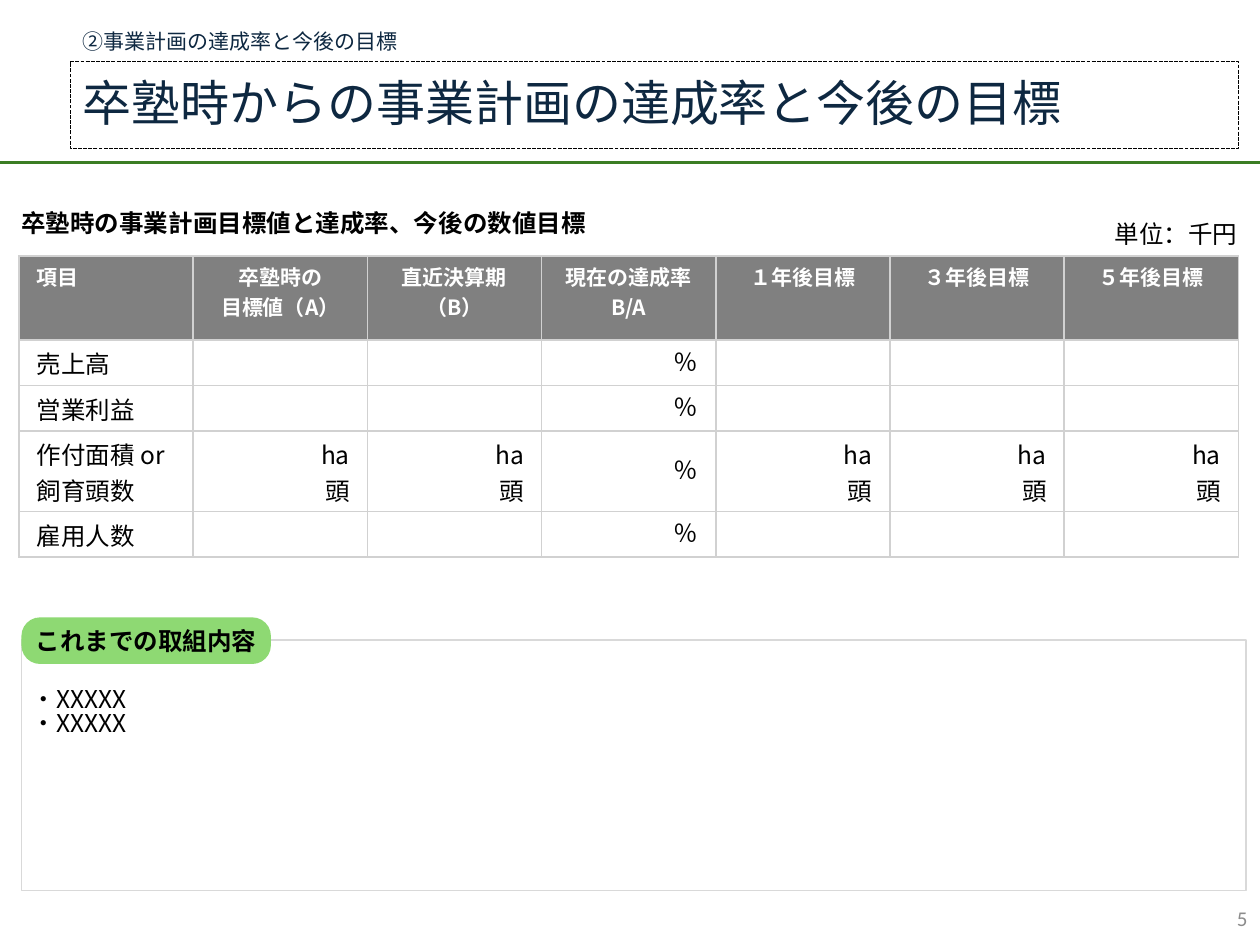
from lxml import etree
from pptx import Presentation
from pptx.dml.color import RGBColor
from pptx.enum.dml import MSO_LINE
from pptx.enum.shapes import MSO_CONNECTOR, MSO_SHAPE
from pptx.enum.text import MSO_ANCHOR, PP_ALIGN
from pptx.oxml.ns import qn
from pptx.util import Inches, Pt

LEFT, CENTER, RIGHT = PP_ALIGN.LEFT, PP_ALIGN.CENTER, PP_ALIGN.RIGHT
TOP, MIDDLE = MSO_ANCHOR.TOP, MSO_ANCHOR.MIDDLE
RECT, ROUNDED = MSO_SHAPE.RECTANGLE, MSO_SHAPE.ROUNDED_RECTANGLE
STRAIGHT, DASH = MSO_CONNECTOR.STRAIGHT, MSO_LINE.SQUARE_DOT

COLORS = {
    "navy": "0E2841", "black": "000000", "white": "FFFFFF", "header": "808080",
    "grid": "D1D1D1", "frame": "D9D9D9", "rule": "3B7D23", "label": "8ED973",
    "number": "8C8C8C",
}
JP, LATIN = "Noto Sans CJK JP", "Calibri"
BOX_INSETS = (0.1, 0.05, 0.1, 0.05)
CELL_INSETS = (0.14, 0.04, 0.14, 0.04)


def rgb(name):
    return RGBColor.from_string(COLORS[name])


class SlideBuilder:
    """Holds the text style and the current slide."""

    def __init__(self, prs):
        self.shapes = prs.slides.add_slide(prs.slide_layouts[6]).shapes
        self.style = {"size": 14, "bold": False, "color": "black", "font": JP,
                      "align": LEFT, "spacing": 1.0}

    def put_text(self, tf, text, **changes):
        """Fill a text frame, one paragraph for each line."""
        style = {**self.style, **changes}
        for i, line in enumerate(text.split("\n")):
            p = tf.paragraphs[0] if i == 0 else tf.add_paragraph()
            formats = {"alignment": style["align"], "line_spacing": style["spacing"]}
            for name, value in formats.items():
                setattr(p, name, value)
            if not line:  # an empty cell keeps the body text height
                end = etree.SubElement(p._p, qn("a:endParaRPr"))
                end.set("sz", str(style["size"] * 100))
                continue
            r = p.add_run()
            r.text = line
            fonts = {"size": Pt(style["size"]), "bold": style["bold"], "name": style["font"]}
            for name, value in fonts.items():
                setattr(r.font, name, value)
            r.font.color.rgb = rgb(style["color"])
            # East Asian glyphs take the same typeface
            ea = etree.SubElement(r.font._element, qn("a:ea"))
            ea.set("typeface", style["font"])

    def frame(self, holder, insets, anchor):
        """Set insets and anchor of a text frame or a table cell."""
        sides = ("margin_left", "margin_top", "margin_right", "margin_bottom")
        formats = dict(zip(sides, map(Inches, insets)), vertical_anchor=anchor)
        for name, value in formats.items():
            setattr(holder, name, value)

    def text(self, box, text, anchor=TOP, **style):
        s = self.shapes.add_textbox(*map(Inches, box))
        s.text_frame.word_wrap = True
        self.frame(s.text_frame, BOX_INSETS, anchor)
        self.put_text(s.text_frame, text, **style)

    def shape(self, kind, box, text, fill=None, line=None, dash=None, radius=None,
              insets=BOX_INSETS, anchor=MIDDLE, **style):
        s = self.shapes.add_shape(kind, *map(Inches, box))
        s.shadow.inherit = False
        if radius is not None:
            s.adjustments[0] = radius
        if fill:
            s.fill.solid()
            s.fill.fore_color.rgb = rgb(fill)
        else:
            s.fill.background()
        if line:
            s.line.color.rgb = rgb(line)
            s.line.width = Pt(0.75)
            if dash:
                s.line.dash_style = dash
        else:
            s.line.fill.background()
        s.text_frame.word_wrap = True
        self.frame(s.text_frame, insets, anchor)
        self.put_text(s.text_frame, text, **style)

    def rule(self, x1, x2, y, color, width):
        s = self.shapes.add_connector(STRAIGHT, *map(Inches, (x1, y, x2, y)))
        s.line.color.rgb = rgb(color)
        s.line.width = Pt(width)
        etree.SubElement(s._element.spPr, qn("a:effectLst"))

    def borders(self, cell, color, width):
        tc_pr = cell._tc.get_or_add_tcPr()
        for i, side in enumerate(("lnL", "lnR", "lnT", "lnB")):
            ln = etree.Element(qn(f"a:{side}"), w=str(Pt(width)))
            fill = etree.SubElement(ln, qn("a:solidFill"))
            etree.SubElement(fill, qn("a:srgbClr"), val=COLORS[color])
            tc_pr.insert(i, ln)

    def table(self, box, heights, rows):
        """Draw a grid with a dark header row and equal columns."""
        cols = len(rows[0])
        table = self.shapes.add_table(len(rows), cols, *map(Inches, box)).table
        table.first_row = table.horz_banding = False
        for column in table.columns:
            column.width = Inches(box[2] / cols)
        for i, (height, row) in enumerate(zip(heights, rows)):
            table.rows[i].height = Inches(height)
            for j, text in enumerate(row):
                cell = table.cell(i, j)
                self.frame(cell, CELL_INSETS, MIDDLE if i else TOP)
                if i == 0:
                    cell.fill.solid()
                    cell.fill.fore_color.rgb = rgb("header")
                    style = {"size": 12, "bold": True, "color": "white",
                             "align": CENTER if j else LEFT}
                else:
                    cell.fill.background()
                    style = {"align": RIGHT if j else LEFT,
                             "font": LATIN if text == "％" else JP}
                self.put_text(cell.text_frame, text, **style)
                self.borders(cell, "grid", 1)


def target_row(item, unit=""):
    """Row with the unit in every value column and a rate in the middle."""
    return [item, unit, unit, "％", unit, unit, unit]


def main():
    prs = Presentation()
    prs.slide_width, prs.slide_height = Inches(10), Inches(7.5)
    b = SlideBuilder(prs)

    # Heading
    b.rule(0, 10, 1.29, "rule", 2)
    b.text((0.56, 0.2, 3.27, 0.29), "②事業計画の達成率と今後の目標",
           size=12, color="navy", spacing=0.9)
    b.shape(RECT, (0.56, 0.49, 9.27, 0.69), "卒塾時からの事業計画の達成率と今後の目標",
            fill="white", line="black", dash=DASH, size=28, color="navy", spacing=0.9)

    # Slide number
    b.text((7.75, 7.09, 2.25, 0.4), "5", anchor=MIDDLE, size=12,
           color="number", font=LATIN, align=RIGHT)

    # Activities so far
    b.shape(RECT, (0.17, 5.08, 9.72, 1.99), "・XXXXX\n・XXXXX", line="frame",
            insets=(0.08, 0.39, 0.08, 0.04), anchor=TOP, spacing=0.82)
    b.shape(ROUNDED, (0.17, 4.9, 1.98, 0.37), "これまでの取組内容", fill="label",
            radius=0.4, insets=(0.04, 0.05, 0.04, 0.05), bold=True, align=CENTER)

    # Targets and achievement rates
    header = ["項目", "卒塾時の\n目標値（A）", "直近決算期\n（B）", "現在の達成率\nB/A"]
    header += [f"{year}年後目標" for year in "１３５"]
    heights = [0.67, 0.36, 0.36, 0.64, 0.36]
    b.table((0.15, 2.03, 9.68, sum(heights)), heights, [
        header,
        target_row("売上高"),
        target_row("営業利益"),
        target_row("作付面積 or\n飼育頭数", "ha\n頭"),
        target_row("雇用人数"),
    ])
    b.text((0.07, 1.58, 4.81, 0.37), "卒塾時の事業計画目標値と達成率、今後の数値目標",
           anchor=MIDDLE, bold=True)
    b.text((8.46, 1.69, 1.46, 0.34), "単位：千円", align=RIGHT)

    prs.save("out.pptx")


if __name__ == "__main__":
    main()
